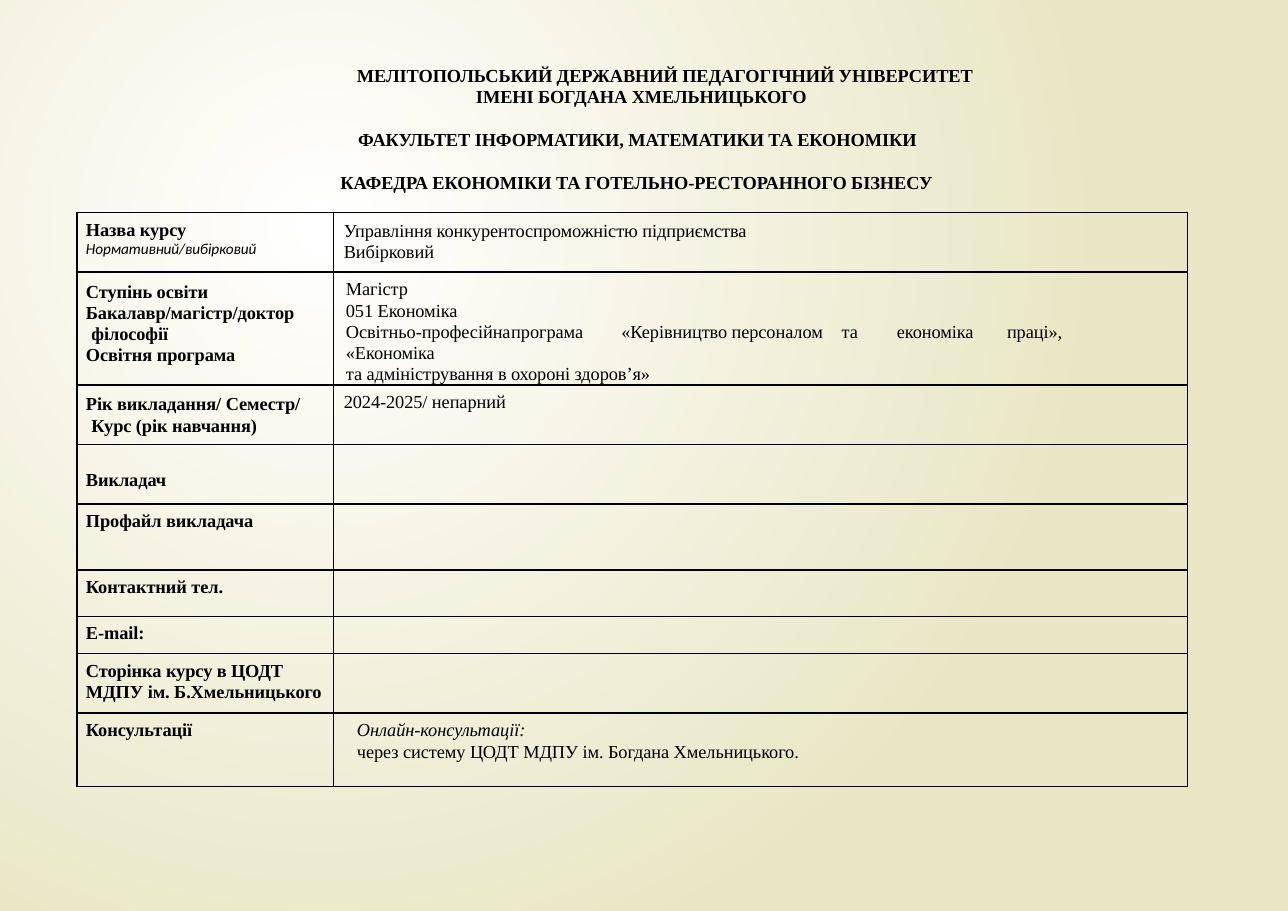
from dataclasses import dataclass

from lxml import etree
from pptx import Presentation, util as u
from pptx.dml.color import RGBColor
from pptx.enum import text
from pptx.oxml import ns

WIDTH, HEIGHT = 11.69, 8.27
INK, PAPER, SAND = "000000", "FFFFFF", "E8E6C4"


@dataclass
class Line:
    words: str
    indent: float = 0.08
    bold: bool = False
    italic: bool = False
    size: float = 12
    font: str = "Times New Roman"
    pitch: float = 13.9
    tabs: tuple = ()


def label(words, indent=0.08):
    return Line(words, indent, bold=True)


HEADING = [
    Line("МЕЛІТОПОЛЬСЬКИЙ ДЕРЖАВНИЙ ПЕДАГОГІЧНИЙ УНІВЕРСИТЕТ", 0.16, True),
    Line("ІМЕНІ БОГДАНА ХМЕЛЬНИЦЬКОГО", 1.24, True),
    Line("ФАКУЛЬТЕТ ІНФОРМАТИКИ, МАТЕМАТИКИ ТА ЕКОНОМІКИ", 0.17, True, pitch=28),
    Line("КАФЕДРА ЕКОНОМІКИ ТА ГОТЕЛЬНО-РЕСТОРАННОГО БІЗНЕСУ", 0.01, True, pitch=28),
]

# Each row: height, (top inset, label lines), (top inset, value lines)
COURSE = [
    (0.54, (0.06, [label("Назва курсу"),
                   Line("Нормативний/вибірковий", italic=True, size=10,
                        font="Calibri", pitch=11.9)]),
     (0.07, [Line("Управління конкурентоспроможністю підприємства", 0.09),
             Line("Вибірковий", 0.09)])),
    (0.92, (0.08, [label("Ступінь освіти"), label("Бакалавр/магістр/доктор"),
                   label("філософії", 0.13), label("Освітня програма")]),
     (0.06, [Line("Магістр", 0.11), Line("051 Економіка", 0.11),
             Line("Освітньо-професійна\tпрограма\t«Керівництво\tперсоналом\tта"
                  "\tекономіка\tпраці»,\t«Економіка", 0.11,
                  tabs=(1.78, 2.61, 3.75, 4.75, 5.05, 5.93, 6.6)),
             Line("та адміністрування в охороні здоров’я»", 0.11)])),
    (0.54, (0.08, [label("Рік викладання/ Семестр/"), label("Курс (рік навчання)", 0.13)]),
     (0.06, [Line("2024-2025/ непарний", 0.09)])),
    (0.54, (0.23, [label("Викладач")]), (0, [])),
    (0.6, (0.06, [label("Профайл викладача")]), (0, [])),
    (0.42, (0.06, [label("Контактний тел.")]), (0, [])),
    (0.34, (0.06, [label("E-mail:")]), (0, [])),
    (0.54, (0.06, [label("Сторінка курсу в ЦОДТ"), label("МДПУ ім. Б.Хмельницького")]),
     (0, [])),
    (0.67, (0.06, [label("Консультації")]),
     (0.06, [Line("Онлайн-консультації:", 0.21, italic=True),
             Line("через систему ЦОДТ МДПУ ім. Богдана Хмельницького.", 0.21)])),
]


def color(code):
    return RGBColor.from_string(code)


def write_lines(frame, lines):
    frame.text = "\n".join(line.words for line in lines)
    for paragraph, line in zip(frame.paragraphs, lines):
        paragraph.alignment = text.PP_ALIGN.LEFT
        paragraph.line_spacing = u.Pt(line.pitch)
        paragraph.space_before = u.Pt(0)
        props = paragraph._p.get_or_add_pPr()
        props.set("marL", str(u.Inches(line.indent)))
        props.set("indent", "0")
        if line.tabs:
            stops = etree.SubElement(props, ns.qn("a:tabLst"))
            for stop in line.tabs:
                etree.SubElement(stops, ns.qn("a:tab"), pos=str(u.Inches(stop)), algn="l")
        for run in paragraph.runs:
            font = run.font
            font.name, font.size = line.font, u.Pt(line.size)
            font.bold, font.italic = line.bold, line.italic
            font.color.rgb = color(INK)
            run._r.get_or_add_rPr().set("spc", "-5")


def paint_background(slide):
    fill = slide.background.fill
    fill.gradient()
    for stop, code in zip(fill.gradient_stops, (PAPER, SAND)):
        stop.color.rgb = color(code)
    gradient = slide.background._cSld.find(".//" + ns.qn("a:gradFill"))
    gradient.remove(gradient.find(ns.qn("a:lin")))
    circle = etree.SubElement(gradient, ns.qn("a:path"))
    circle.set("path", "circle")
    etree.SubElement(circle, ns.qn("a:fillToRect"),
                     l="50000", t="50000", r="100000", b="100000")


def add_heading(slide, left, top, width, height):
    title = slide.shapes.title
    title.left, title.top = u.Inches(left), u.Inches(top)
    title.width, title.height = u.Inches(width), u.Inches(height)
    frame = title.text_frame
    frame.margin_left = frame.margin_right = frame.margin_bottom = 0
    frame.margin_top = u.Inches(0.03)
    frame.vertical_anchor = text.MSO_ANCHOR.TOP
    frame.auto_size = text.MSO_AUTO_SIZE.NONE
    frame.word_wrap = True
    write_lines(frame, HEADING)


def style_cell(cell):
    props = cell._tc.get_or_add_tcPr()
    for side in ("lnL", "lnR", "lnT", "lnB"):
        border = etree.SubElement(props, ns.qn("a:" + side), w=str(u.Pt(1)))
        solid = etree.SubElement(border, ns.qn("a:solidFill"))
        etree.SubElement(solid, ns.qn("a:srgbClr"), val=INK)
    cell.fill.background()


def add_course_table(slide, left, top, width, height):
    table = slide.shapes.add_table(len(COURSE), 2, u.Inches(left), u.Inches(top),
                                   u.Inches(width), u.Inches(height)).table
    table.first_row = table.horz_banding = False
    label_width = 2.33
    table.columns[0].width = u.Inches(label_width)
    table.columns[1].width = u.Inches(width - label_width)
    for row, (row_height, *contents) in zip(table.rows, COURSE):
        row.height = u.Inches(row_height)
        for cell, (inset, lines) in zip(row.cells, contents):
            cell.margin_left = cell.margin_right = cell.margin_bottom = 0
            cell.margin_top = u.Inches(inset)
            style_cell(cell)
            write_lines(cell.text_frame, lines)


def main():
    deck = Presentation()
    deck.slide_width, deck.slide_height = u.Inches(WIDTH), u.Inches(HEIGHT)
    slide = deck.slides.add_slide(deck.slide_layouts.get_by_name("Title Only"))
    paint_background(slide)
    add_heading(slide, 3.08, 0.56, 5.83, 1.19)
    add_course_table(slide, 0.7, 1.93, 10.08, sum(row[0] for row in COURSE))
    deck.save("out.pptx")


if __name__ == "__main__":
    main()
